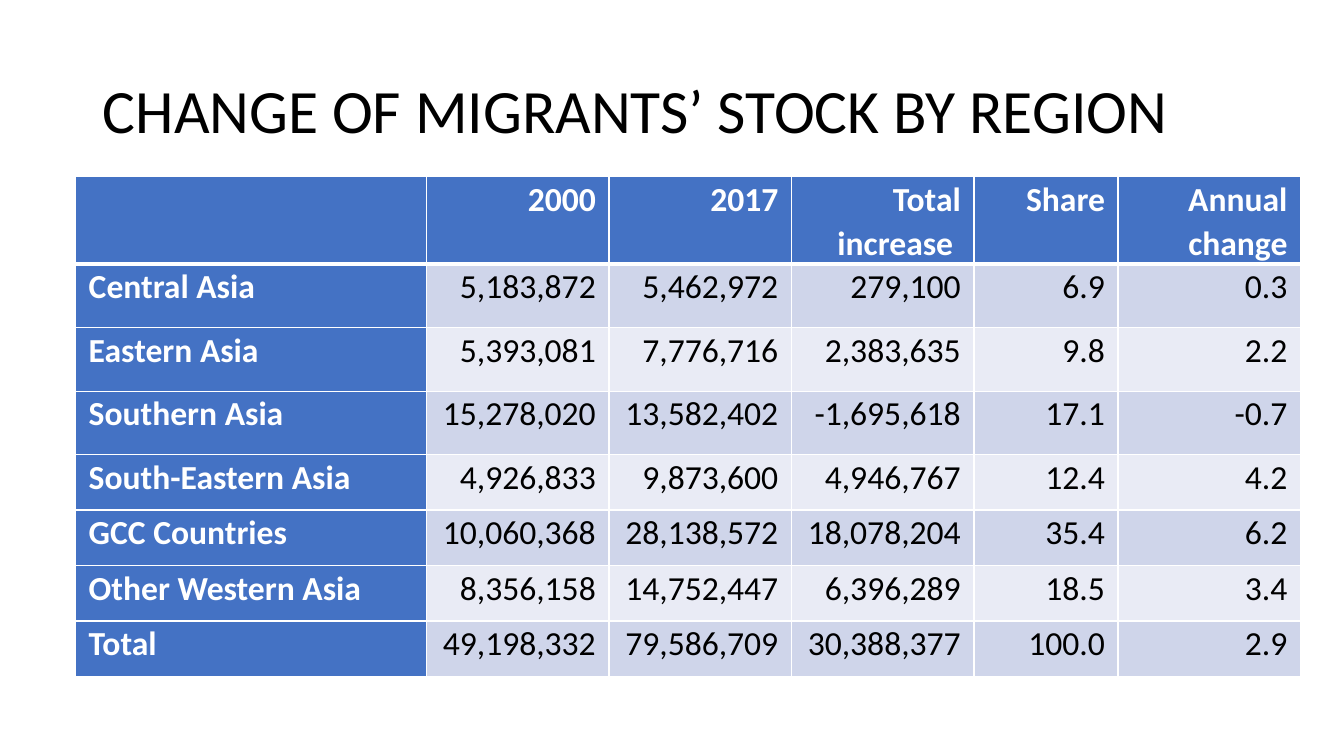
from lxml.etree import SubElement as Sub
from pptx import Presentation
from pptx.dml.color import RGBColor as RGB
from pptx.enum.text import MSO_ANCHOR as Anchor, MSO_AUTO_SIZE as Auto, PP_ALIGN as Align
from pptx.oxml.ns import qn
from pptx.util import Inches, Pt

HUES = {"head": "4472C4", "odd": "CFD5EA", "even": "E9EBF5", "white": "FFFFFF", "black": "000000"}
WIDTHS = [3.48, 1.81, 1.81, 1.81, 1.43, 1.81]
HEIGHTS = [0.74] + [0.63] * 3 + [0.55] * 4
ROWS = [
    ["", "2000", "2017", "Total increase ", "Share", "Annual change"],
    ["Central Asia", "5,183,872", "5,462,972", "279,100", "6.9", "0.3"],
    ["Eastern Asia", "5,393,081", "7,776,716", "2,383,635", "9.8", "2.2"],
    ["Southern Asia", "15,278,020", "13,582,402", "-1,695,618", "17.1", "-0.7"],
    ["South-Eastern Asia", "4,926,833", "9,873,600", "4,946,767", "12.4", "4.2"],
    ["GCC Countries", "10,060,368", "28,138,572", "18,078,204", "35.4", "6.2"],
    ["Other Western Asia", "8,356,158", "14,752,447", "6,396,289", "18.5", "3.4"],
    ["Total", "49,198,332", "79,586,709", "30,388,377", "100.0", "2.9"],
]


def write(frame, text, size=24, hue="black", bold=False, align=Align.LEFT, space=1.07):
    para = frame.paragraphs[0]
    para.alignment = align
    para.line_spacing = space
    if text:
        run = para.add_run()
        run.text = text
        run.font.name = "Calibri"
        run.font.size = Pt(size)
        run.font.bold = bold
        run.font.color.rgb = RGB.from_string(HUES[hue])


def edge(cell, side, width):
    line = Sub(cell._tc.get_or_add_tcPr(), qn(f"a:ln{side}"), w=str(Pt(width)))
    fill = Sub(line, qn("a:solidFill"))
    Sub(fill, qn("a:srgbClr"), val=HUES["white"])


deck = Presentation()
deck.slide_width, deck.slide_height = Inches(13.33), Inches(7.5)
slide = deck.slides.add_slide(deck.slide_layouts[5])

title = slide.shapes.title
title.left, title.top = Inches(0.92), Inches(0.4)
title.width, title.height = Inches(11.5), Inches(1.45)
frame = title.text_frame
frame.word_wrap = True
frame.auto_size = Auto.NONE
frame.vertical_anchor = Anchor.MIDDLE
write(frame, "CHANGE OF MIGRANTS’ STOCK BY REGION", size=44, space=0.9)

table = slide.shapes.add_table(
    len(ROWS), len(WIDTHS), Inches(0.75), Inches(1.75), Inches(sum(WIDTHS)), Inches(sum(HEIGHTS))
).table
table.first_col = True
for col, width in zip(table.columns, WIDTHS):
    col.width = Inches(width)
for row, height in zip(table.rows, HEIGHTS):
    row.height = Inches(height)

for r, row in enumerate(ROWS):
    for c, text in enumerate(row):
        cell = table.cell(r, c)
        head = r == 0 or c == 0
        cell.margin_left = cell.margin_right = Inches(0.13)
        cell.margin_top = cell.margin_bottom = 0
        for side in "LRTB":
            thick = (r, side) in [(0, "B"), (1, "T")]
            edge(cell, side, 3 if thick else 1)
        cell.fill.solid()
        shade = "head" if head else "odd" if r % 2 else "even"
        cell.fill.fore_color.rgb = RGB.from_string(HUES[shade])
        write(cell.text_frame, text, hue="white" if head else "black", bold=head,
              align=Align.RIGHT if c else Align.LEFT)

deck.save("out.pptx")
